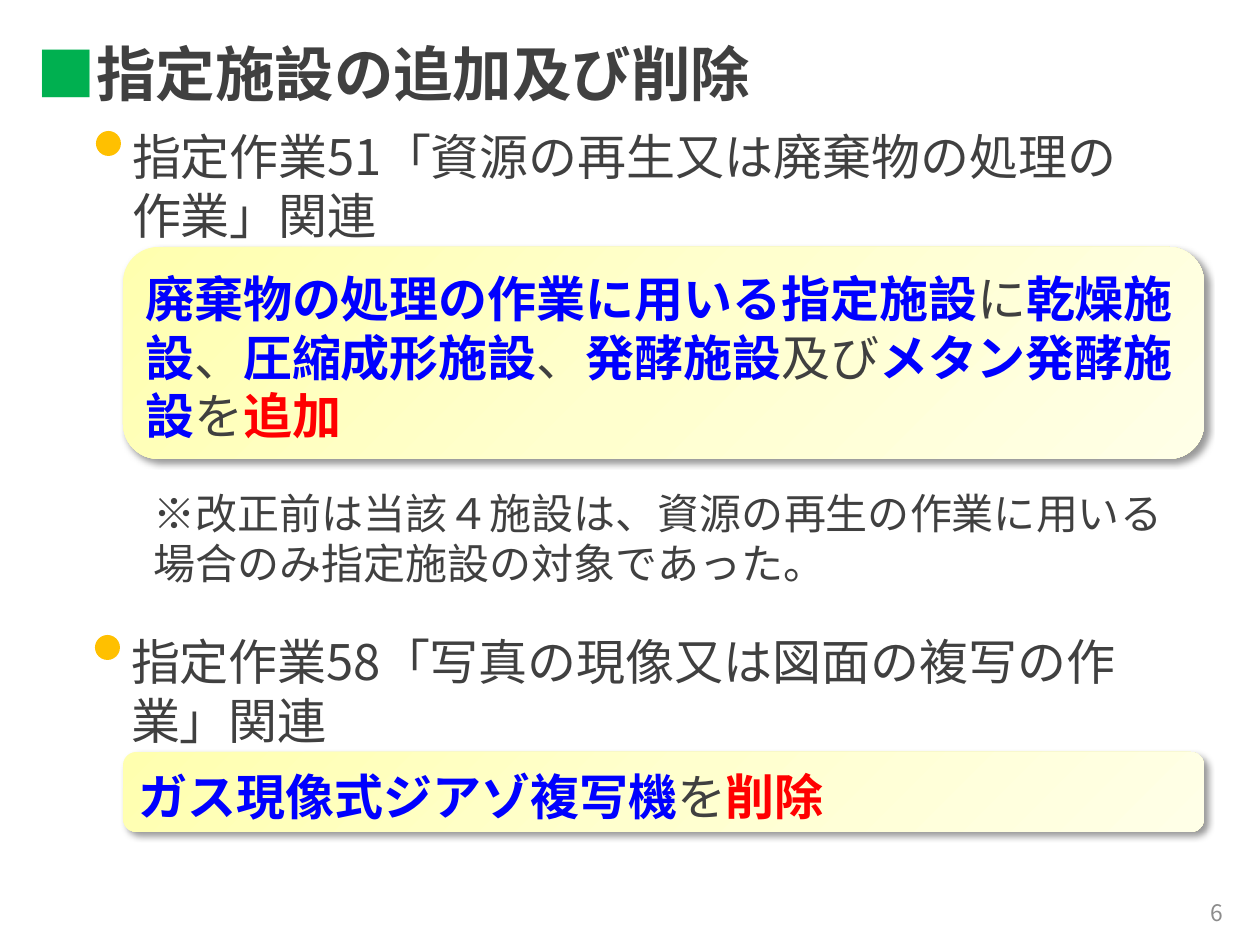
from dataclasses import dataclass

from lxml import etree
from pptx import Presentation
from pptx.dml.color import RGBColor
from pptx.enum.shapes import MSO_SHAPE
from pptx.enum.text import MSO_ANCHOR, MSO_AUTO_SIZE, PP_ALIGN
from pptx.oxml import parse_xml
from pptx.oxml.ns import nsdecls, qn
from pptx.util import Emu, Pt

OVAL = MSO_SHAPE.OVAL
ROUNDED = MSO_SHAPE.ROUNDED_RECTANGLE
TOP, MIDDLE = MSO_ANCHOR.TOP, MSO_ANCHOR.MIDDLE
LEFT, RIGHT = PP_ALIGN.LEFT, PP_ALIGN.RIGHT
GROW, FIXED = MSO_AUTO_SIZE.SHAPE_TO_FIT_TEXT, MSO_AUTO_SIZE.NONE

PX_PER_INCH = 126
FONT = "Noto Sans CJK JP"
TEXT, BLUE, RED = "404040", "0000FF", "FF0000"
GREEN, ORANGE, GRAY = "00B050", "FFC000", "8C8C8C"
YELLOWS = {0: "FFFFAF", 50000: "FFFFCE", 100000: "FFFFE7"}
LINE_HEIGHT = 1.2
DOT = 25


@dataclass
class Box:
    x: int
    y: int
    w: int
    h: int


@dataclass
class Run:
    text: str
    color: str = TEXT
    bold: bool = False


@dataclass
class Section:
    dot: Box
    heading_box: Box
    heading: str
    panel_box: Box
    panel: list[Run]


def px(n: int) -> Emu:
    return Emu(round(n * 914400 / PX_PER_INCH))


def place(box: Box) -> tuple[Emu, ...]:
    return tuple(px(n) for n in (box.x, box.y, box.w, box.h))


def rgb(color: str) -> RGBColor:
    return RGBColor.from_string(color)


def write(s, runs: list[Run], size: int, anchor=TOP, align=LEFT, auto_size=GROW):
    tf = s.text_frame
    frame = {
        "word_wrap": True,
        "auto_size": auto_size,
        "vertical_anchor": anchor,
        "margin_left": px(12),
        "margin_right": px(12),
        "margin_top": px(11),
        "margin_bottom": px(2),
    }
    for name, value in frame.items():
        setattr(tf, name, value)
    p = tf.paragraphs[0]
    p.alignment = align
    p.line_spacing = Pt(round(size * LINE_HEIGHT, 1))
    for run in runs:
        r = p.add_run()
        r.text = run.text
        for name, value in {"name": FONT, "size": Pt(size), "bold": run.bold}.items():
            setattr(r.font, name, value)
        r.font.color.rgb = rgb(run.color)
        etree.SubElement(r.font._element, qn("a:ea"), typeface=FONT)
    return p


def add_text(slide, box: Box, runs: list[Run], size: int, **options):
    s = slide.shapes.add_textbox(*place(box))
    return write(s, runs, size, **options)


def add_dot(slide, box: Box) -> None:
    s = slide.shapes.add_shape(OVAL, *place(box))
    s.shadow.inherit = False
    s.fill.solid()
    s.fill.fore_color.rgb = rgb(ORANGE)
    s.line.fill.background()


def add_panel(slide, box: Box, runs: list[Run]) -> None:
    s = slide.shapes.add_shape(ROUNDED, *place(box))
    s.shadow.inherit = False
    s.line.fill.background()
    s.fill.gradient()
    s.fill.gradient_angle = 315
    spPr = s._element.spPr
    stops = spPr.find(qn("a:gradFill")).find(qn("a:gsLst"))
    for stop in list(stops):
        stops.remove(stop)
    for pos, color in YELLOWS.items():
        stop = etree.SubElement(stops, qn("a:gs"), pos=str(pos))
        etree.SubElement(stop, qn("a:srgbClr"), val=color)
    spPr.find(qn("a:effectLst")).append(parse_xml(
        f'<a:outerShdw {nsdecls("a")} blurRad="{Pt(4)}" dist="{Pt(3)}" dir="2700000"'
        ' algn="tl" rotWithShape="0"><a:srgbClr val="000000">'
        '<a:alpha val="40000"/></a:srgbClr></a:outerShdw>'
    ))
    write(s, runs, 28)


def add_section(slide, section: Section) -> None:
    add_text(slide, section.heading_box, [Run(section.heading)], 28)
    add_dot(slide, section.dot)
    add_panel(slide, section.panel_box, section.panel)


SECTIONS = [
    Section(
        Box(96, 131, DOT, DOT),
        Box(120, 116, 1041, 131),
        "指定作業51「資源の再生又は廃棄物の処理の作業」関連",
        Box(123, 247, 1081, 212),
        [
            Run("廃棄物の処理の作業に用いる指定施設", BLUE, True),
            Run("に"),
            Run("乾燥施設", BLUE, True),
            Run("、"),
            Run("圧縮成形施設", BLUE, True),
            Run("、"),
            Run("発酵施設", BLUE, True),
            Run("及び"),
            Run("メタン発酵施設", BLUE, True),
            Run("を"),
            Run("追加", RED, True),
        ],
    ),
    Section(
        Box(95, 635, DOT, DOT),
        Box(119, 621, 1041, 131),
        "指定作業58「写真の現像又は図面の複写の作業」関連",
        Box(123, 752, 1081, 80),
        [
            Run("ガス現像式ジアゾ複写機", BLUE, True),
            Run("を"),
            Run("削除", RED, True),
        ],
    ),
]


def main() -> None:
    prs = Presentation()
    prs.slide_width, prs.slide_height = px(1260), px(945)
    slide = prs.slides.add_slide(prs.slide_layouts[6])

    add_text(slide, Box(951, 883, 284, 50), [Run("6", GRAY)], 13,
             anchor=MIDDLE, align=RIGHT, auto_size=FIXED)
    title = [Run("■", GREEN, True), Run("指定施設の追加及び削除", TEXT, True)]
    p = add_text(slide, Box(25, 26, 1137, 89), title, 34, auto_size=FIXED)
    pPr = p._p.get_or_add_pPr()
    pPr.set("marL", str(px(38)))
    pPr.set("indent", str(px(-38)))

    for section in SECTIONS:
        add_section(slide, section)
    note = "※改正前は当該４施設は、資源の再生の作業に用いる場合のみ指定施設の対象であった。"
    add_text(slide, Box(142, 476, 1043, 115), [Run(note)], 24)

    prs.save("out.pptx")


if __name__ == "__main__":
    main()
